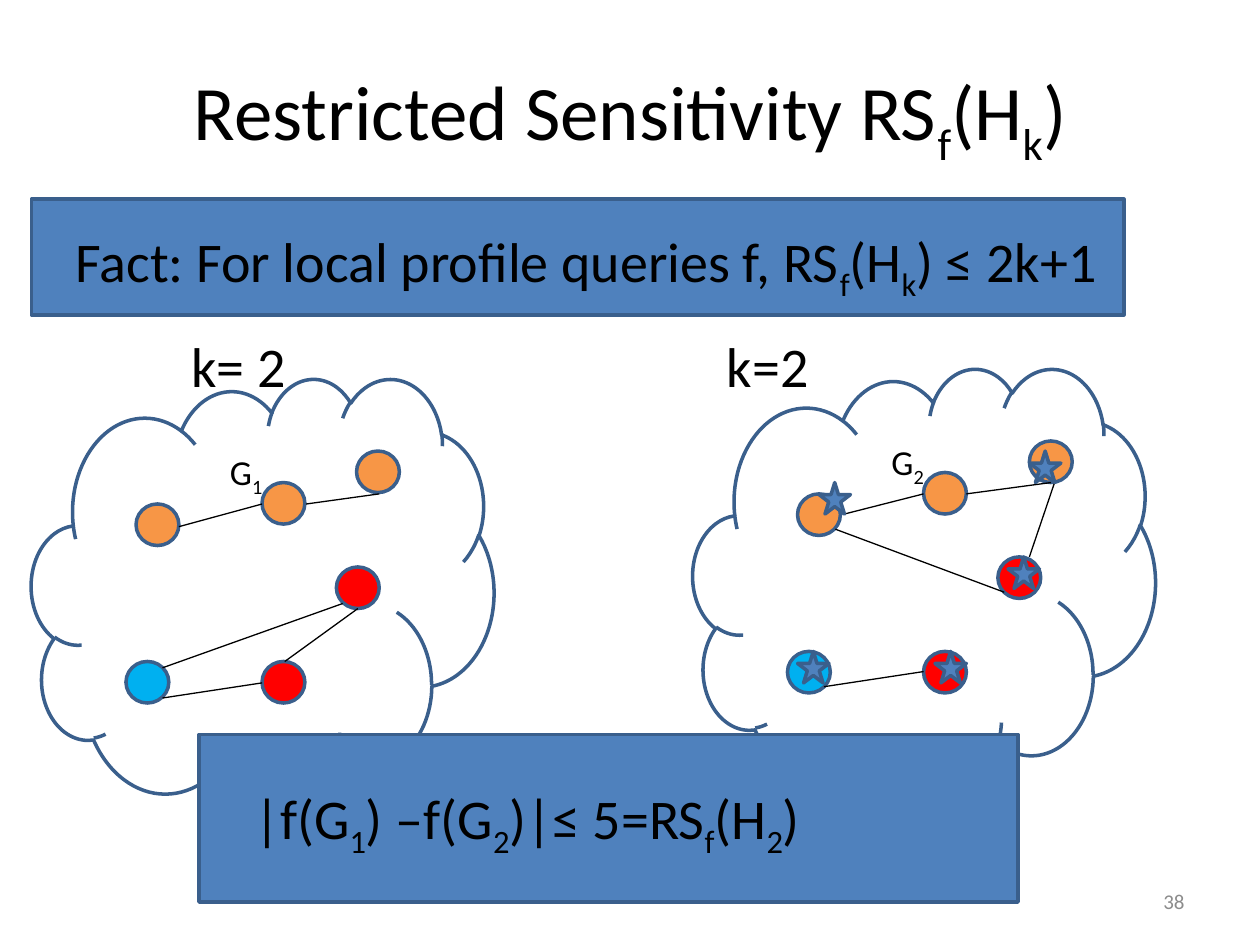
import pptx
import pptx.dml.color
import pptx.enum.shapes
import pptx.enum.text
import pptx.oxml.ns
import pptx.util
from dataclasses import dataclass
from lxml import etree

Inches = pptx.util.Inches
Preset = pptx.enum.shapes.MSO_SHAPE
Align = pptx.enum.text.PP_ALIGN
Anchor = pptx.enum.text.MSO_ANCHOR

BLACK, WHITE, BLUE, OUTLINE = "000000", "FFFFFF", "4F81BD", "3A5F8C"
ORANGE, RED, CYAN, GRAY = "F79646", "FF0000", "00B0F0", "8C8C8C"
NODE_SIZE = (0.34, 0.33)
STAR_SIZE = (0.25, 0.25)
CLOUD_SIZE = (3.67, 3.5)

Point = tuple[float, float]
NODES: list[tuple[Point, str]] = [
    ((1.83, 0.83), ORANGE),
    ((0.83, 1), ORANGE),
    ((1.83, 2.25), RED),
    ((2.42, 1.5), RED),
    ((0.75, 2.25), CYAN),
]


@dataclass
class Graph:
    label: str
    origin: Point
    peak: Point
    edges: list[tuple[Point, Point]]
    stars: list[Point]


@dataclass
class Caption:
    text: str
    position: Point
    size: Point
    points: int
    color: str = BLACK
    align: Align = Align.LEFT
    anchor: Anchor = Anchor.TOP
    wrap: bool = True


GRAPHS = [
    Graph("G_1", (0.25, 3), (2.83, 3.58),
          [((1.29, 5.3), (2.72, 4.79)), ((1.29, 5.54), (2.08, 5.42)),
           ((2.26, 5.25), (2.84, 4.83)), ((2.43, 4), (3.01, 3.92)),
           ((1.42, 4.18), (2.08, 4))],
          []),
    Graph("G_2", (5.5, 2.92), (8.17, 3.5),
          [((8.37, 3.83), (8.17, 4.42)), ((6.54, 5.45), (7.33, 5.33)),
           ((6.63, 4.2), (7.97, 4.7)), ((7.67, 3.92), (8.34, 3.83)),
           ((6.7, 4.08), (7.33, 3.92))],
          [(8, 4.42), (7.42, 5.17), (6.33, 5.17), (6.5, 3.83), (8.17, 3.58)]),
]

BANNERS: list[tuple[Point, Point]] = [
    ((0.25, 1.58), (8.67, 0.92)),
    ((1.58, 5.83), (6.5, 1.33)),
]

CAPTIONS = [
    Caption("Restricted Sensitivity RS_f(H_k)", (0.5, 0.3), (9, 1.25), 44,
            align=Align.CENTER, anchor=Anchor.MIDDLE),
    Caption("Fact: For local profile queries f, RS_f(H_k) ≤ 2k+1",
            (0.5, 1.75), (9, 0.64), 32),
    Caption("k= 2", (1.42, 2.58), (0.96, 0.64), 32, wrap=False),
    Caption("k=2", (5.67, 2.58), (0.86, 0.64), 32, wrap=False),
    Caption("|f(G_1) –f(G_2)|≤ 5=RS_f(H_2)", (1.92, 6.17), (5.75, 0.64), 32),
    Caption("38", (7.17, 6.95), (2.33, 0.4), 12, GRAY, Align.RIGHT, Anchor.MIDDLE),
]


def rgb(color: str) -> pptx.dml.color.RGBColor:
    return pptx.dml.color.RGBColor.from_string(color)


def write(frame, text: str, points: int, color: str, align: Align,
          anchor: Anchor, wrap: bool = True) -> None:
    """Write text in which an underscore lowers the next character."""
    for name, value in {"word_wrap": wrap, "vertical_anchor": anchor}.items():
        setattr(frame, name, value)
    paragraph = frame.paragraphs[0]
    paragraph.alignment = align
    head, *tails = text.split("_")
    pieces = [(head, False)]
    for tail in tails:
        pieces += [(tail[0], True), (tail[1:], False)]
    for piece, lowered in pieces:
        if not piece:
            continue
        run = paragraph.add_run()
        run.text = piece
        font_format = {"name": "Calibri", "size": pptx.util.Pt(points)}
        for name, value in font_format.items():
            setattr(run.font, name, value)
        run.font.color.rgb = rgb(color)
        if lowered:
            run._r.get_or_add_rPr().set("baseline", "-25000")


def draw_shape(slide, preset: Preset, position: Point, size: Point, fill: str):
    shape = slide.shapes.add_shape(preset, *map(Inches, position + size))
    shape.shadow.inherit = False
    shape.fill.solid()
    shape.fill.fore_color.rgb = rgb(fill)
    shape.line.color.rgb = rgb(OUTLINE)
    shape.line.width = pptx.util.Pt(2)
    return shape


def draw_edge(slide, start: Point, end: Point) -> None:
    edge = slide.shapes.add_connector(
        pptx.enum.shapes.MSO_CONNECTOR.STRAIGHT, *map(Inches, start + end))
    edge.line.color.rgb = rgb(BLACK)
    edge.line.width = pptx.util.Pt(0.75)
    etree.SubElement(edge._element.spPr, pptx.oxml.ns.qn("a:effectLst"))


def draw_graph(slide, graph: Graph) -> None:
    cloud = draw_shape(slide, Preset.CLOUD, graph.origin, CLOUD_SIZE, WHITE)
    write(cloud.text_frame, graph.label, 20, BLACK, Align.CENTER, Anchor.TOP)
    left, top = graph.origin
    placed = [((left + x, top + y), color) for (x, y), color in NODES]
    for position, color in placed + [(graph.peak, ORANGE)]:
        draw_shape(slide, Preset.OVAL, position, NODE_SIZE, color)
    for start, end in graph.edges:
        draw_edge(slide, start, end)
    for position in graph.stars:
        draw_shape(slide, Preset.STAR_5_POINT, position, STAR_SIZE, BLUE)


def draw_caption(slide, caption: Caption) -> None:
    box = slide.shapes.add_textbox(*map(Inches, caption.position + caption.size))
    write(box.text_frame, caption.text, caption.points, caption.color,
          caption.align, caption.anchor, caption.wrap)


def main() -> None:
    deck = pptx.Presentation()
    deck.slide_width, deck.slide_height = Inches(10), Inches(7.5)
    slide = deck.slides.add_slide(deck.slide_layouts[6])
    for graph in GRAPHS:
        draw_graph(slide, graph)
    for position, size in BANNERS:
        draw_shape(slide, Preset.RECTANGLE, position, size, BLUE)
    for caption in CAPTIONS:
        draw_caption(slide, caption)
    deck.save("out.pptx")


if __name__ == "__main__":
    main()
